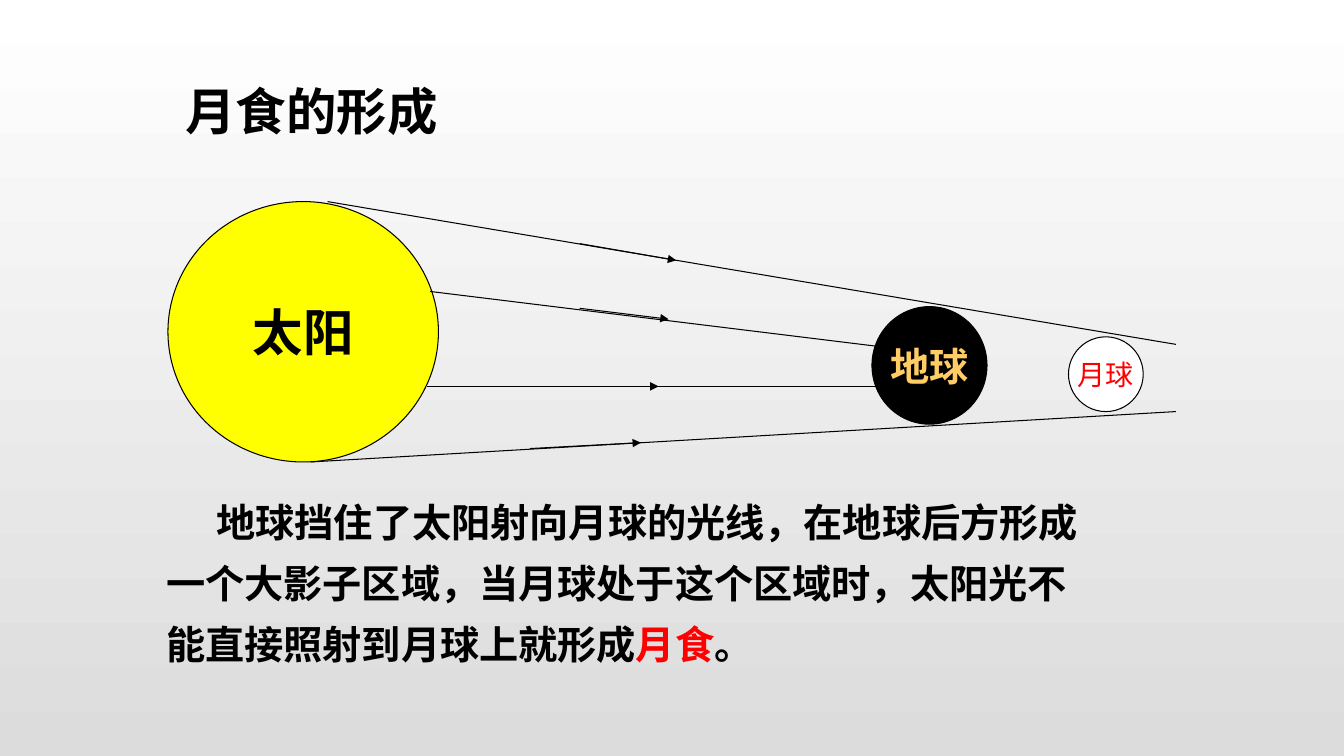
from pptx import Presentation
from pptx.dml.color import RGBColor
from pptx.enum.shapes import MSO_CONNECTOR as Connector, MSO_SHAPE as Shape
from pptx.enum.text import MSO_ANCHOR as Anchor, MSO_AUTO_SIZE as AutoSize, PP_ALIGN as Align
from pptx.oxml.ns import qn
from pptx.util import Inches, Pt
from lxml.etree import SubElement

COLUMNS, ROWS = 160, 90
BLACK, RED = "000000", "FF0000"


def color(code):
    return RGBColor.from_string(code)


class EclipseSlide:
    line_width = Pt(0.75)
    text_font = "Arial"
    label_font = "Times New Roman"

    def __init__(self, deck):
        self.slide = deck.slides.add_slide(deck.slide_layouts[6])
        self.column = deck.slide_width / COLUMNS
        self.row = deck.slide_height / ROWS

    def place(self, x, y):
        return round(x * self.column), round(y * self.row)

    def background(self, *codes):
        fill = self.slide.background.fill
        fill.gradient()
        fill.gradient_angle = 270
        for position, (stop, code) in enumerate(zip(fill.gradient_stops, codes)):
            stop.position = position
            stop.color.rgb = color(code)

    def fill_paragraph(self, paragraph, parts, font, size, code, bold=True):
        paragraph.font.name = font
        paragraph.font.size = Pt(size)
        paragraph.font.bold = bold
        paragraph.font.color.rgb = color(code)
        for words, accent in parts:
            run = paragraph.add_run()
            run.text = words
            if accent:
                run.font.color.rgb = color(accent)

    def text(self, x, y, width, height, parts, size, wrap=True):
        frame = self.slide.shapes.add_textbox(
            *self.place(x, y), *self.place(width, height)).text_frame
        frame.word_wrap = wrap
        frame.auto_size = AutoSize.SHAPE_TO_FIT_TEXT
        paragraph = frame.paragraphs[0]
        self.fill_paragraph(paragraph, parts, self.text_font, size, BLACK)
        return paragraph

    def body(self, x, y, width, height, name, fill, code, size, bold=True):
        disc = self.slide.shapes.add_shape(
            Shape.OVAL, *self.place(x, y), *self.place(width, height))
        disc.shadow.inherit = False
        disc.fill.solid()
        disc.fill.fore_color.rgb = color(fill)
        disc.line.color.rgb = color(BLACK)
        disc.line.width = self.line_width
        frame = disc.text_frame
        frame.word_wrap = False
        frame.vertical_anchor = Anchor.MIDDLE
        paragraph = frame.paragraphs[0]
        paragraph.alignment = Align.CENTER
        self.fill_paragraph(paragraph, [(name, None)], self.label_font, size, code, bold)

    def ray(self, start, end, arrow=False):
        ray = self.slide.shapes.add_connector(
            Connector.STRAIGHT, *self.place(*start), *self.place(*end))
        ray.line.color.rgb = color(BLACK)
        ray.line.width = self.line_width
        properties = ray._element.spPr
        if arrow:
            SubElement(properties.find(qn("a:ln")), qn("a:tailEnd"), type="triangle")
        SubElement(properties, qn("a:effectLst"))


def main():
    deck = Presentation()
    deck.slide_width, deck.slide_height = Inches(13.33), Inches(7.5)
    page = EclipseSlide(deck)
    page.background("FFFFFF", "DCDCDC")

    explanation = page.text(18.6, 57, 113, 23.3, [
        ("地球挡住了太阳射向月球的光线，在地球后方形成一个大影子区域，"
         "当月球处于这个区域时，太阳光不能直接照射到月球上就形成", None),
        ("月食", RED),
        ("。", None),
    ], 28)
    explanation.line_spacing = 1.3
    explanation._p.get_or_add_pPr().set("indent", str(Inches(0.5)))

    page.body(20, 24, 32.2, 31, "太阳", "FFFF00", BLACK, 36)
    page.body(127.2, 40.1, 8.9, 8.9, "月球", "FFFFFF", RED, 20, bold=False)
    page.body(103.8, 36.5, 13.7, 14, "地球", BLACK, "FFCC66", 28)

    sunlight = [
        ((39, 24), (140, 41)),
        ((37, 55), (140, 49)),
        ((51.2, 34.7), (105, 41.3)),
        ((50.8, 46), (104.5, 46)),
    ]
    directions = [
        ((69, 29), (80.5, 31)),
        ((69, 36.7), (79.6, 38)),
        ((68, 46), (78.4, 46)),
        ((63.1, 53.4), (76.3, 52.7)),
    ]
    for start, end in sunlight:
        page.ray(start, end)
    for start, end in directions:
        page.ray(start, end, arrow=True)

    page.text(20.9, 8.9, 32.8, 8.5, [("月食的形成", None)], 36, wrap=False)
    deck.save("out.pptx")


if __name__ == "__main__":
    main()
